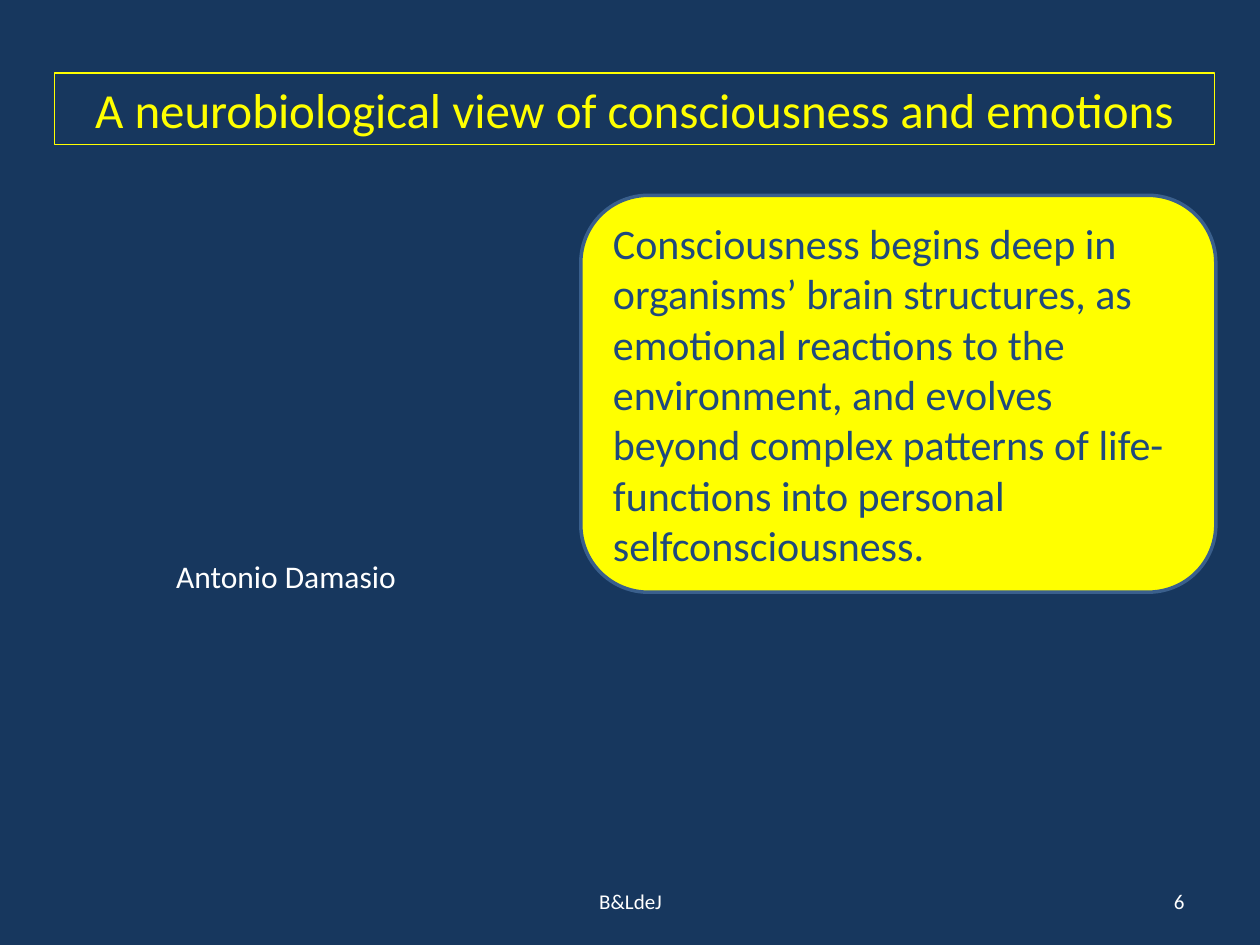
from pptx import Presentation
from pptx.dml.color import RGBColor
from pptx.enum.shapes import MSO_SHAPE
from pptx.enum.text import MSO_ANCHOR, PP_ALIGN
from pptx.util import Inches, Pt

NAVY = RGBColor(0x17, 0x37, 0x5E)
YELLOW = RGBColor(0xFF, 0xFF, 0x00)
WHITE = RGBColor(0xFF, 0xFF, 0xFF)
BLUE = RGBColor(0x1F, 0x49, 0x7D)
OUTLINE = RGBColor(0x3A, 0x5F, 0x8C)


def write(sp, text, size, color, align=PP_ALIGN.LEFT, anchor=MSO_ANCHOR.TOP, wrap=True):
    tf = sp.text_frame
    tf.text = text
    tf.word_wrap = wrap
    tf.vertical_anchor = anchor
    p = tf.paragraphs[0]
    p.alignment = align
    font = p.runs[0].font
    font.name, font.size, font.color.rgb = "Calibri", Pt(size), color


prs = Presentation()
prs.slide_width, prs.slide_height = Inches(10), Inches(7.5)
s = prs.slides.add_slide(prs.slide_layouts[6])
s.background.fill.solid()
s.background.fill.fore_color.rgb = NAVY

# Footer and slide number
for text, left, width, align in [
    ("B&LdeJ", 3.42, 3.17, PP_ALIGN.CENTER),
    ("6", 7.17, 2.33, PP_ALIGN.RIGHT),
]:
    sp = s.shapes.add_textbox(Inches(left), Inches(6.95), Inches(width), Inches(0.4))
    write(sp, text, 12, WHITE, align, MSO_ANCHOR.MIDDLE)

# Title
title = s.shapes.add_shape(
    MSO_SHAPE.RECTANGLE, Inches(0.43), Inches(0.58), Inches(9.21), Inches(0.57))
title.shadow.inherit = False
title.fill.background()
title.line.color.rgb = YELLOW
title.line.width = Pt(0.75)
write(title, "A neurobiological view of consciousness and emotions", 28, YELLOW, PP_ALIGN.CENTER)

# Quotation and its author
quote = s.shapes.add_shape(
    MSO_SHAPE.ROUNDED_RECTANGULAR_CALLOUT, Inches(4.61), Inches(1.55), Inches(5.04), Inches(3.15))
quote.adjustments[0] = -0.31
quote.adjustments[1] = -0.5
quote.adjustments[2] = 0.17
quote.shadow.inherit = False
quote.fill.solid()
quote.fill.fore_color.rgb = YELLOW
quote.line.color.rgb = OUTLINE
quote.line.width = Pt(2)
write(quote,
      "Consciousness begins deep in organisms’ brain structures, as emotional reactions "
      "to the environment, and evolves beyond complex patterns of life-functions into "
      "personal selfconsciousness.",
      24, BLUE, anchor=MSO_ANCHOR.MIDDLE)

author = s.shapes.add_textbox(Inches(1.3), Inches(4.37), Inches(1.96), Inches(0.4))
write(author, "Antonio Damasio", 18, WHITE, wrap=False)

prs.save("out.pptx")
